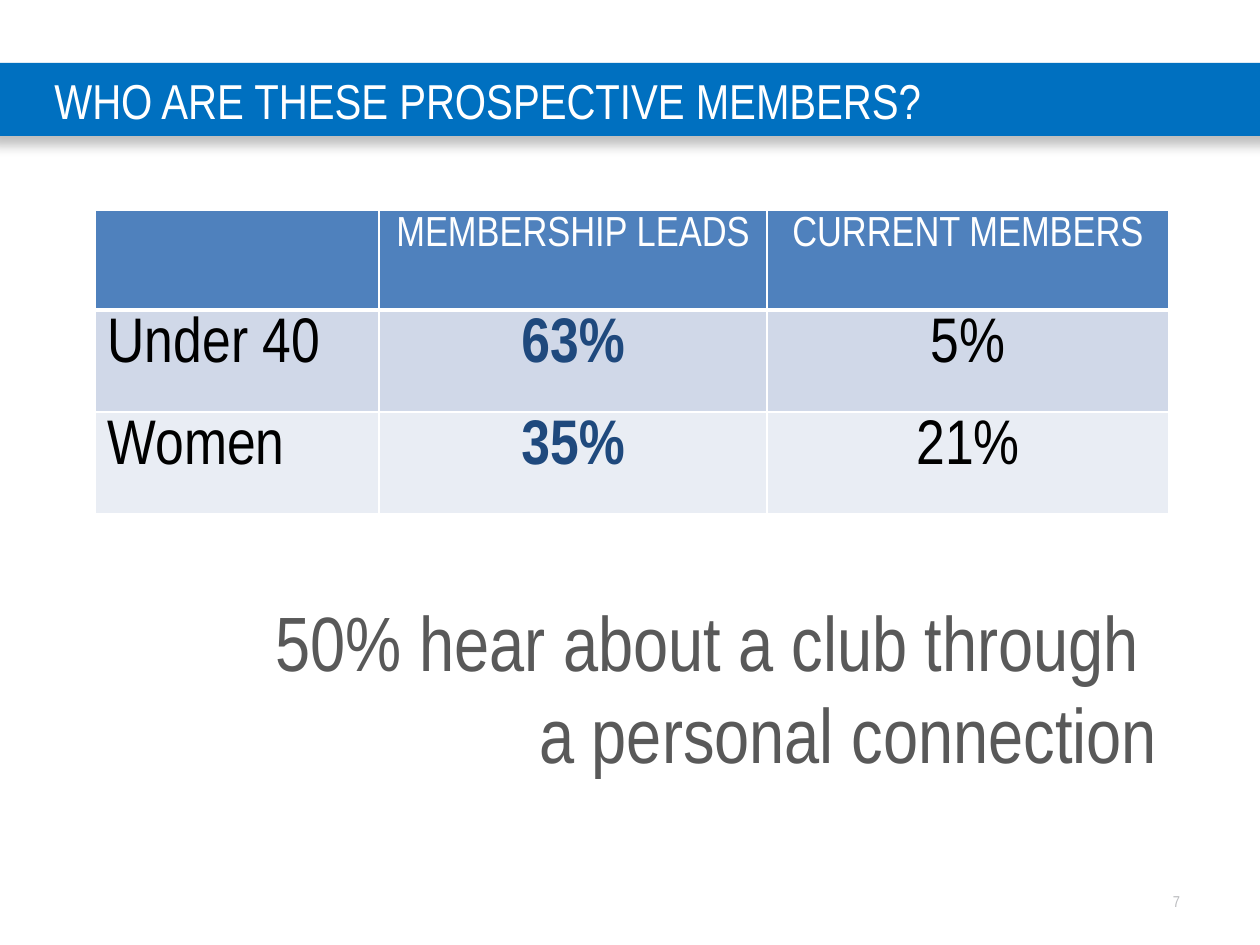
from dataclasses import dataclass

from lxml.etree import SubElement
from pptx import Presentation
from pptx.dml.color import RGBColor
from pptx.enum.shapes import MSO_SHAPE
from pptx.enum.text import MSO_ANCHOR, PP_ALIGN
from pptx.oxml.ns import qn
from pptx.util import Emu, Pt

PX_PER_INCH = 126


def px(n):
    return Emu(round(n * 914400 / PX_PER_INCH))


@dataclass(frozen=True)
class Theme:
    font: str = "Arial Narrow"
    white: str = "FFFFFF"
    black: str = "000000"
    banner: str = "0070C0"
    header: str = "4F81BD"
    bands: tuple = ("D0D8E8", "E9EDF4")
    accent: str = "1F497D"
    body: str = "595959"
    muted: str = "BCBDC0"
    title_size: int = 28
    header_size: int = 24
    cell_size: int = 36
    body_size: int = 44
    number_size: int = 9


def write(tf, text, *, size, color, font, bold=False, align=PP_ALIGN.LEFT):
    """Fill the first paragraph; a newline becomes a line break."""
    p = tf.paragraphs[0]
    p.alignment = align
    for i, line in enumerate(text.split("\n")):
        if i:
            p.add_line_break()
        r = p.add_run()
        r.text = line
        r.font.name = font
        r.font.size = Pt(size)
        r.font.bold = bold
        r.font.color.rgb = RGBColor.from_string(color)


def add_color(parent, color, alpha=None):
    clr = SubElement(parent, qn("a:srgbClr"), val=color)
    if alpha is not None:
        SubElement(clr, qn("a:alpha"), val=str(alpha * 1000))


class SlideBuilder:
    def __init__(self, slide, theme):
        self.s = slide
        self.theme = theme

    def text(self, box, text, *, anchor=MSO_ANCHOR.TOP, inset=True, **fmt):
        tf = self.s.shapes.add_textbox(*map(px, box)).text_frame
        tf.word_wrap = True
        tf.vertical_anchor = anchor
        if not inset:
            tf.margin_left = tf.margin_right = tf.margin_top = tf.margin_bottom = 0
        write(tf, text, font=self.theme.font, **fmt)

    def banner(self, box):
        sp = self.s.shapes.add_shape(MSO_SHAPE.RECTANGLE, *map(px, box))
        sp.fill.solid()
        sp.fill.fore_color.rgb = RGBColor.from_string(self.theme.banner)
        sp.line.fill.background()
        sp.shadow.inherit = False
        effects = sp.element.spPr.find(qn("a:effectLst"))
        shadow = SubElement(effects, qn("a:outerShdw"), blurRad=str(Pt(7)),
                            dist=str(Pt(4.8)), dir=str(90 * 60000),
                            algn="t", rotWithShape="0")
        add_color(shadow, self.theme.black, alpha=25)

    def borders(self, cell, **widths):
        """Draw white cell edges; L, R, T and B give widths in points."""
        tc_pr = cell._tc.get_or_add_tcPr()
        for side in "LRTB":
            ln = SubElement(tc_pr, qn(f"a:ln{side}"), w=str(Pt(widths.get(side, 1))))
            add_color(SubElement(ln, qn("a:solidFill")), self.theme.white)

    def table(self, left, top, col_widths, row_heights, rows):
        t = self.theme
        frame = self.s.shapes.add_table(
            len(rows), len(col_widths), px(left), px(top),
            px(sum(col_widths)), px(sum(row_heights)))
        table = frame.table
        for col, width in zip(table.columns, col_widths):
            col.width = px(width)
        for row, height in zip(table.rows, row_heights):
            row.height = px(height)
        for i, values in enumerate(rows):
            for j, value in enumerate(values):
                cell = table.cell(i, j)
                self.borders(cell, T=3 if i == 1 else 1, B=3 if i == 0 else 1)
                cell.fill.solid()
                fill = t.bands[(i - 1) % 2] if i else t.header
                cell.fill.fore_color.rgb = RGBColor.from_string(fill)
                if not value:
                    continue
                lead = i > 0 and j == 1
                color = t.white if i == 0 else t.accent if lead else t.black
                write(cell.text_frame, value, font=t.font, color=color, bold=lead,
                      size=t.cell_size if i else t.header_size,
                      align=PP_ALIGN.CENTER if j else PP_ALIGN.LEFT)


def main():
    prs = Presentation()
    prs.slide_width, prs.slide_height = px(1260), px(945)
    t = Theme()
    b = SlideBuilder(prs.slides.add_slide(prs.slide_layouts[6]), t)

    b.text((872, 892, 308, 19), "7", size=t.number_size, color=t.muted,
           align=PP_ALIGN.RIGHT, inset=False)
    b.banner((-10, 63, 1281, 73))
    b.text((42, 63, 1229, 73), "WHO ARE THESE PROSPECTIVE MEMBERS?",
           size=t.title_size, color=t.white, anchor=MSO_ANCHOR.MIDDLE)
    b.text((20, 588, 1150, 219), "50% hear about a club through \na personal connection",
           size=t.body_size, color=t.body, align=PP_ALIGN.RIGHT)
    b.table(95, 210, (284, 388, 402), (100, 102, 102), [
        ("", "MEMBERSHIP LEADS", "CURRENT MEMBERS"),
        ("Under 40", "63%", "5%"),
        ("Women", "35%", "21%"),
    ])
    prs.save("out.pptx")


if __name__ == "__main__":
    main()
